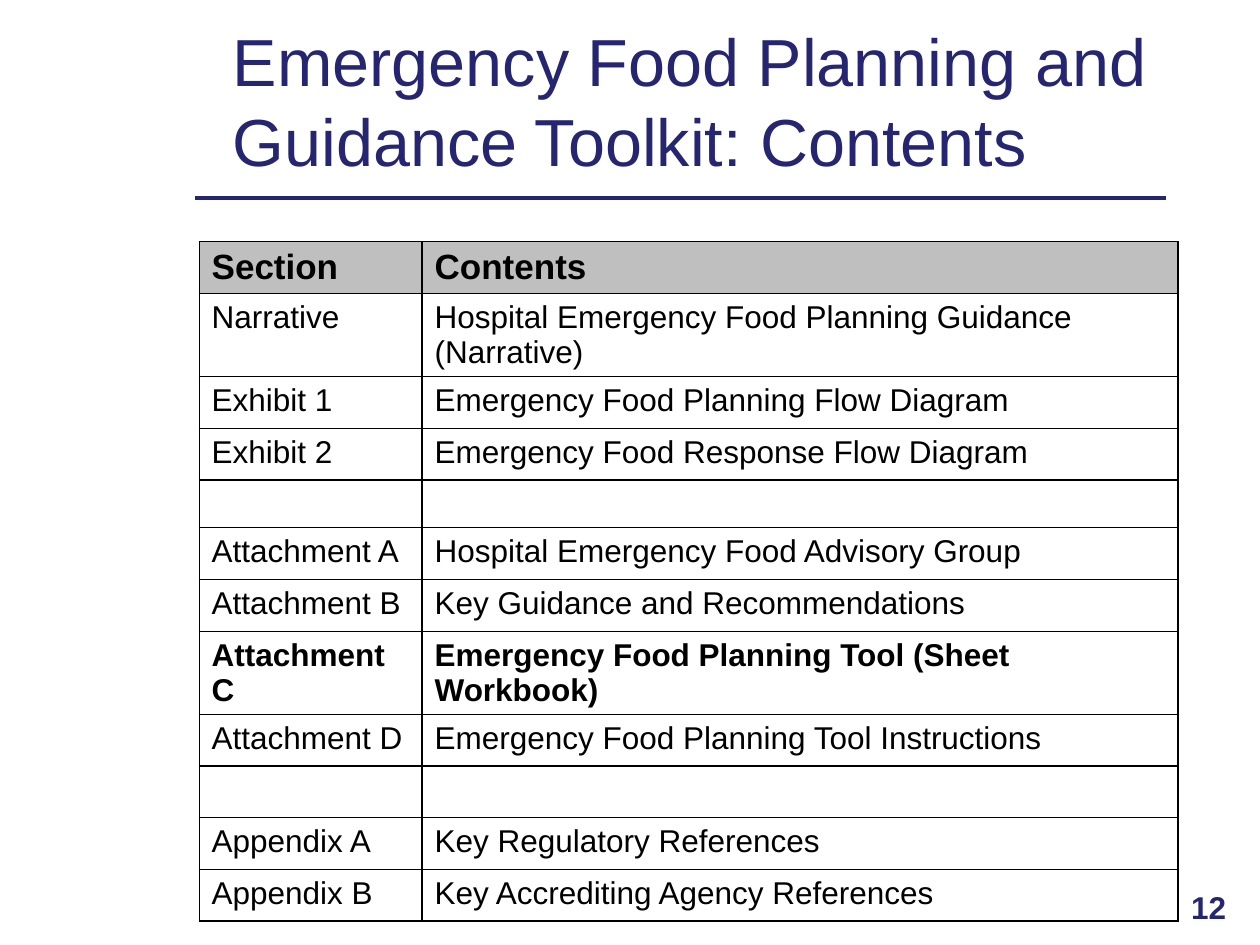
from lxml.etree import SubElement
from pptx import Presentation
from pptx.dml.color import RGBColor
from pptx.enum.shapes import MSO_CONNECTOR
from pptx.enum.text import MSO_ANCHOR, PP_ALIGN
from pptx.oxml import parse_xml
from pptx.oxml.ns import nsdecls, qn
from pptx.util import Inches, Pt

NAVY = RGBColor(0x25, 0x25, 0x71)
BLACK = RGBColor(0, 0, 0)
GREY = RGBColor(0xBF, 0xBF, 0xBF)
WHITE = RGBColor(0xFF, 0xFF, 0xFF)

TITLE = "Emergency Food Planning and Guidance Toolkit: Contents"
PAGE_NUMBER = "12"
SECTIONS = [
    ("Section", "Contents"),
    ("Narrative", "Hospital Emergency Food Planning Guidance (Narrative)"),
    ("Exhibit 1", "Emergency Food Planning Flow Diagram"),
    ("Exhibit 2", "Emergency Food Response Flow Diagram"),
    ("", ""),
    ("Attachment A", "Hospital Emergency Food Advisory Group"),
    ("Attachment B", "Key Guidance and Recommendations"),
    ("Attachment C", "Emergency Food Planning Tool (Sheet Workbook)"),
    ("Attachment D", "Emergency Food Planning Tool Instructions"),
    ("", ""),
    ("Appendix A", "Key Regulatory References"),
    ("Appendix B", "Key Accrediting Agency References"),
]
HEADER_ROW, SHORT_ROW, HIGHLIGHT_ROW = 0, 4, 7
COLUMN_WIDTHS = (1.77, 6)
ROW_HEIGHT, SHORT_HEIGHT = 0.41, 0.38
WIDE_MARGIN, NARROW_MARGIN = 0.05, 0.01


def style_runs(paragraph, size, color, bold=False):
    for run in paragraph.runs:
        run.font.name = "Arial"
        run.font.size = Pt(size)
        run.font.bold = bold
        run.font.color.rgb = color


def add_text(slide, text, left, top, width, height, size, bold=False):
    box = slide.shapes.add_textbox(Inches(left), Inches(top), Inches(width), Inches(height))
    frame = box.text_frame
    frame.word_wrap = True
    frame.text = text
    style_runs(frame.paragraphs[0], size, NAVY, bold)
    return frame


def add_borders(cell):
    properties = cell._tc.get_or_add_tcPr()
    for position, side in enumerate(("lnL", "lnR", "lnT", "lnB")):
        properties.insert(position, parse_xml(
            f'<a:{side} {nsdecls("a")} w="{Pt(0.75)}"><a:solidFill>'
            f'<a:srgbClr val="{BLACK}"/></a:solidFill></a:{side}>'))


def add_contents_table(slide):
    table = slide.shapes.add_table(
        len(SECTIONS), len(COLUMN_WIDTHS), Inches(1.58), Inches(1.92),
        Inches(sum(COLUMN_WIDTHS)), Inches(ROW_HEIGHT * len(SECTIONS))).table
    for column, width in zip(table.columns, COLUMN_WIDTHS):
        column.width = Inches(width)
    for index, entries in enumerate(SECTIONS):
        is_header = index == HEADER_ROW
        table.rows[index].height = Inches(SHORT_HEIGHT if index == SHORT_ROW else ROW_HEIGHT)
        for cell, text in zip(table.rows[index].cells, entries):
            cell.text_frame.text = text
            cell.vertical_anchor = MSO_ANCHOR.BOTTOM if is_header else MSO_ANCHOR.TOP
            cell.margin_top = Inches(NARROW_MARGIN if is_header else WIDE_MARGIN)
            cell.margin_bottom = Inches(WIDE_MARGIN if is_header else NARROW_MARGIN)
            cell.fill.solid()
            cell.fill.fore_color.rgb = GREY if is_header else WHITE
            heading = cell.text_frame.paragraphs[0]
            if not text:
                heading.font.size = Pt(18)
            style_runs(heading, 20 if is_header else 18, BLACK,
                       index in (HEADER_ROW, HIGHLIGHT_ROW))
            add_borders(cell)


def main():
    deck = Presentation()
    deck.slide_width, deck.slide_height = Inches(10), Inches(7.5)
    slide = deck.slides.add_slide(deck.slide_layouts[6])

    rule = slide.shapes.add_connector(
        MSO_CONNECTOR.STRAIGHT, Inches(1.55), Inches(1.57), Inches(9.25), Inches(1.57))
    rule.line.color.rgb = NAVY
    rule.line.width = Pt(2)
    SubElement(rule._element.spPr, qn("a:effectLst"))

    title = add_text(slide, TITLE, 1.5, 0, 7.75, 1.58, 38)
    title.vertical_anchor = MSO_ANCHOR.MIDDLE
    title.paragraphs[0]._p.get_or_add_pPr().set("marL", str(Inches(0.25)))

    page = add_text(slide, PAGE_NUMBER, 9.08, 7, 0.75, 0.42, 18, bold=True)
    page.paragraphs[0].alignment = PP_ALIGN.RIGHT

    add_contents_table(slide)
    deck.save("out.pptx")


if __name__ == "__main__":
    main()
